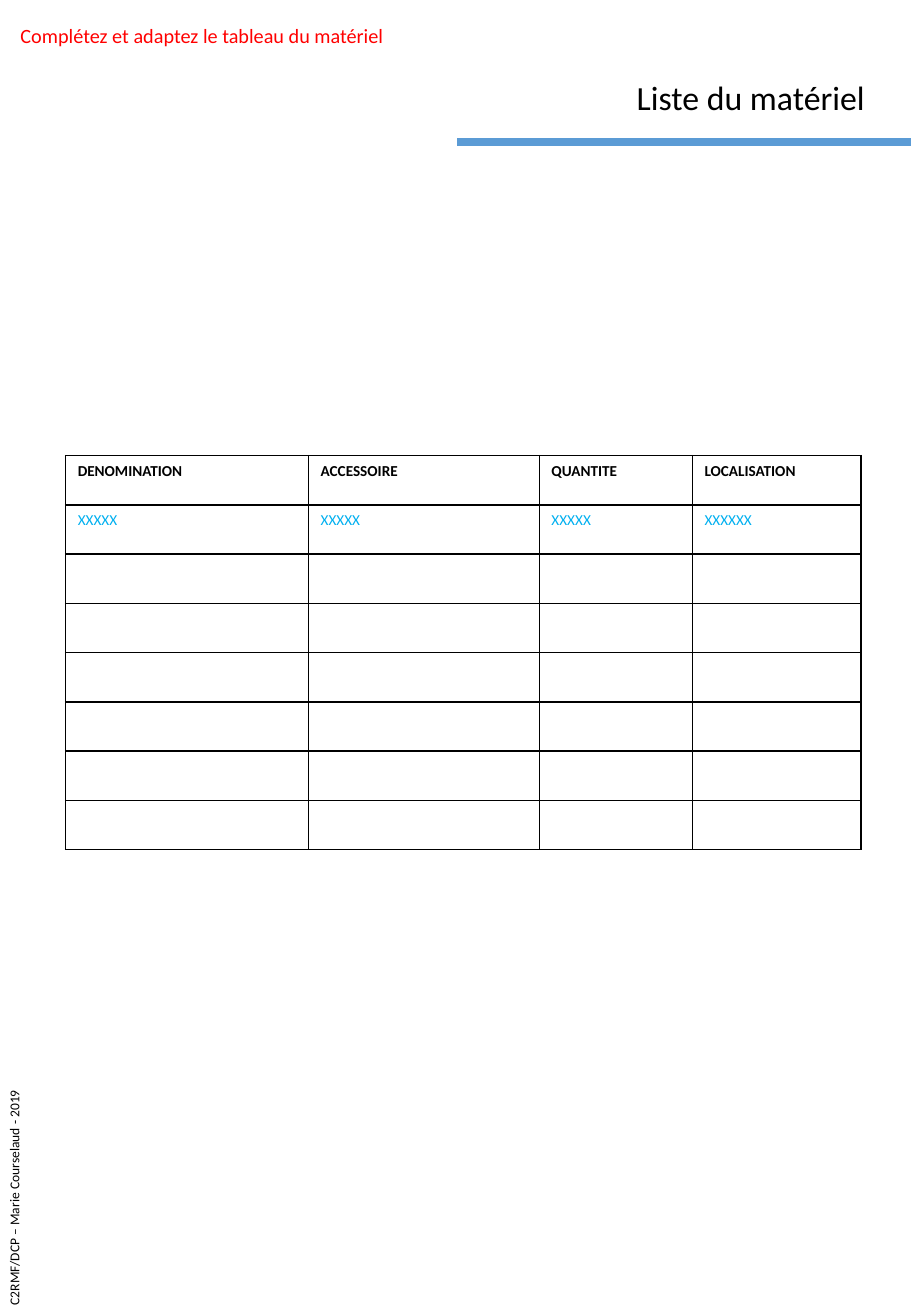
from lxml.etree import SubElement
from pptx import Presentation
from pptx.dml.color import RGBColor
from pptx.enum.shapes import MSO_CONNECTOR
from pptx.enum.text import MSO_ANCHOR, MSO_AUTO_SIZE, PP_ALIGN
from pptx.oxml.ns import qn
from pptx.util import Inches, Pt

BLACK = RGBColor(0x00, 0x00, 0x00)
WHITE = RGBColor(0xFF, 0xFF, 0xFF)
RED = RGBColor(0xFF, 0x00, 0x00)
CYAN = RGBColor(0x00, 0xB0, 0xF0)
BLUE = RGBColor(0x5B, 0x9B, 0xD5)

WIDTH, HEIGHT = Inches(7.5), Inches(10.83)
GRID_COLS, GRID_ROWS = 75, 108.3


def col(n):
    return round(WIDTH * n / GRID_COLS)


def row(n):
    return round(HEIGHT * n / GRID_ROWS)


class Page:
    """Style and current slide; lengths are grid columns and rows."""

    font = "Calibri"

    def __init__(self, prs):
        self.slide = prs.slides.add_slide(prs.slide_layouts[5])
        self.shapes = self.slide.shapes

    def style_text(self, tf, text, size, color, bold=False, align=PP_ALIGN.LEFT):
        tf.text = text
        p = tf.paragraphs[0]
        p.alignment = align
        for r in p.runs:
            r.font.name = self.font
            r.font.size = Pt(size)
            r.font.bold = bold
            r.font.color.rgb = color
        return p

    def title(self, text, x, y, w, h):
        sp = self.shapes.title
        sp.left, sp.top, sp.width, sp.height = col(x), row(y), col(w), row(h)
        tf = sp.text_frame
        tf.word_wrap = True
        tf.auto_size = MSO_AUTO_SIZE.NONE
        tf.vertical_anchor = MSO_ANCHOR.BOTTOM
        p = self.style_text(tf, text, 20, BLACK, align=PP_ALIGN.RIGHT)
        p.line_spacing = 0.9

    def text(self, text, x, y, w, h, size, color, align=PP_ALIGN.LEFT, rotation=0):
        sp = self.shapes.add_textbox(col(x), row(y), col(w), row(h))
        sp.rotation = rotation
        tf = sp.text_frame
        tf.word_wrap = True
        tf.auto_size = MSO_AUTO_SIZE.SHAPE_TO_FIT_TEXT
        self.style_text(tf, text, size, color, align=align)

    def rule(self, x1, x2, y, color, width):
        line = self.shapes.add_connector(
            MSO_CONNECTOR.STRAIGHT, col(x1), row(y), col(x2), row(y))
        line.line.color.rgb = color
        line.line.width = Pt(width)
        SubElement(line._element.spPr, qn("a:effectLst"))

    def borders(self, cell, color, width):
        tcPr = cell._tc.get_or_add_tcPr()
        for i, side in enumerate(("lnL", "lnR", "lnT", "lnB")):
            ln = tcPr.makeelement(qn(f"a:{side}"), {"w": str(Pt(width))})
            fill = SubElement(ln, qn("a:solidFill"))
            SubElement(fill, qn("a:srgbClr"), val=str(color))
            tcPr.insert(i, ln)

    def table(self, header, example, x, y, widths, row_count, row_height):
        table = self.shapes.add_table(
            row_count, len(widths), col(x), row(y),
            col(sum(widths)), row(row_height * row_count)).table
        for column, w in zip(table.columns, widths):
            column.width = col(w)
        for line in table.rows:
            line.height = row(row_height)
        for cell in table.iter_cells():
            cell.fill.solid()
            cell.fill.fore_color.rgb = WHITE
            self.borders(cell, BLACK, 1)
        for j, (name, sample) in enumerate(zip(header, example)):
            self.style_text(table.cell(0, j).text_frame, name, 9, BLACK, bold=True)
            self.style_text(table.cell(1, j).text_frame, sample, 9, CYAN)


def main():
    prs = Presentation()
    prs.slide_width, prs.slide_height = WIDTH, HEIGHT
    page = Page(prs)

    # Heading
    page.title("Liste du matériel", 50.2, 2.2, 22, 8)
    page.rule(75, 37.6, 11.7, BLUE, 4.75)

    # Equipment table
    page.table(
        ["DENOMINATION", "ACCESSOIRE", "QUANTITE", "LOCALISATION"],
        ["XXXXX", "XXXXX", "XXXXX", "XXXXXX"],
        x=5.4, y=37.5, widths=[20, 19, 12.6, 13.9], row_count=8, row_height=4.05)

    # Instruction and side credit
    page.text("Complétez et adaptez le tableau du matériel",
              0.7, 1.4, 36.9, 3, 12, RED, align=PP_ALIGN.JUSTIFY)
    page.text("C2RMF/DCP – Marie Courselaud - 2019",
              -10, 96, 22.4, 2.4, 8, BLACK, rotation=270)

    prs.save("out.pptx")


if __name__ == "__main__":
    main()
